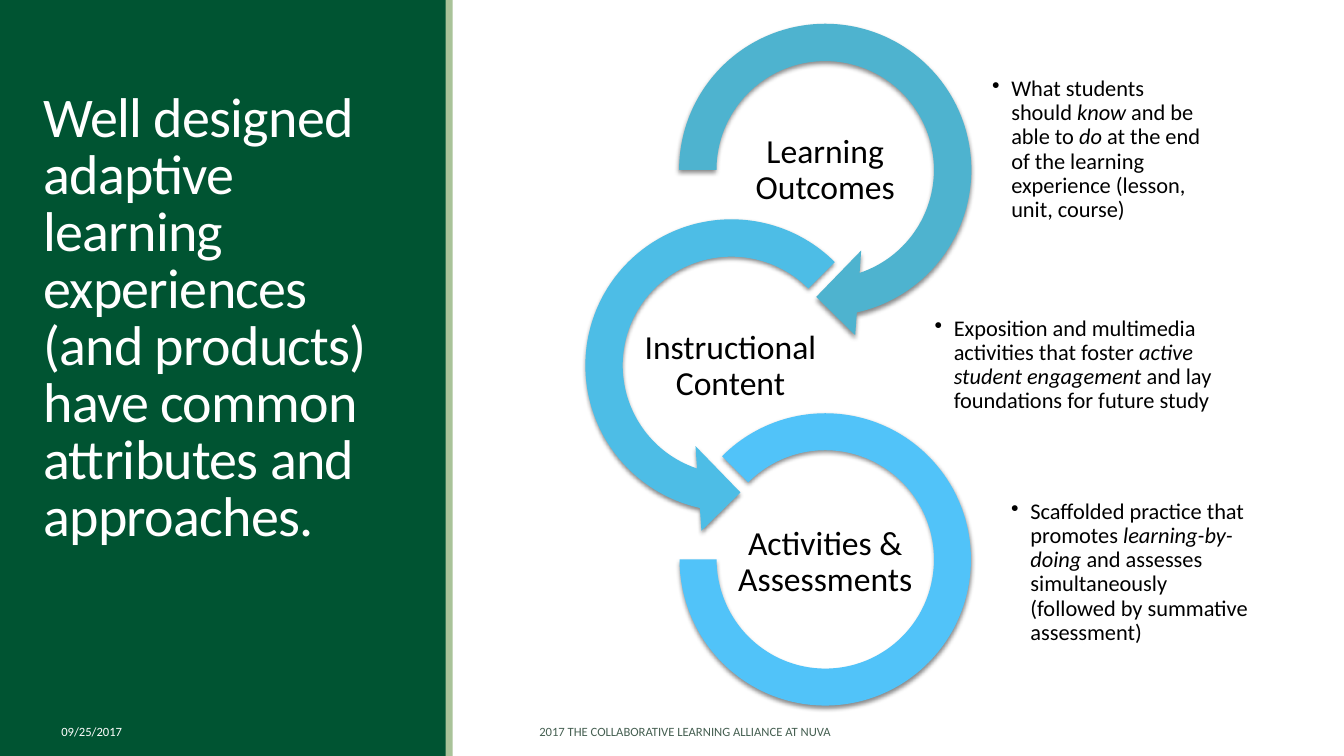
from dataclasses import dataclass

import pptx
import pptx.dml.color
import pptx.enum.shapes
import pptx.enum.text
import pptx.oxml
import pptx.oxml.ns
import pptx.util

Inches = pptx.util.Inches
SHAPE = pptx.enum.shapes.MSO_SHAPE
ALIGN = pptx.enum.text.PP_ALIGN
ANCHOR = pptx.enum.text.MSO_ANCHOR


@dataclass(frozen=True)
class Theme:
    font: str = "Calibri"
    panel: str = "005432"
    stripe: str = "A9C399"
    white: str = "FFFFFF"
    black: str = "000000"
    footer: str = "455F51"
    title_size: int = 40
    label_size: int = 24
    note_size: int = 16
    footer_size: int = 9


THEME = Theme()
STEP_PITCH = 1.945

# Label, label left, arc kind, arc box, arc adjustments, colour, note, note box
STEPS = [
    ("Learning Outcomes", 7.25,
     SHAPE.CIRCULAR_ARROW, (6.5, 0, 3.37, 3.37),
     (0.11, 11.423, 45, 108, 0.125), "4EB3CF",
     "What students should *know* and be able to *do* at the end of the "
     "learning experience (lesson, unit, course)",
     (9.83, 0.66, 2.18, 1.65)),
    ("Instructional Content", 6.31,
     SHAPE.LEFT_CIRCULAR_ARROW, (5.57, 1.94, 3.37, 3.37),
     (0.11, 11.423, 63, 189, 0.125), "4DBDE6",
     "Exposition and multimedia activities that foster *active student "
     "engagement *and lay foundations for future study",
     (9.26, 2.95, 3.05, 1.35)),
    ("Activities & Assessments", 7.25,
     SHAPE.BLOCK_ARC, (6.74, 4.1, 2.89, 2.9),
     (135, 108, 0.127), "51C3F9",
     "Scaffolded practice that promotes *learning-by-doing* and assesses "
     "simultaneously (followed by summative assessment)",
     (10.02, 4.89, 2.44, 1.58)),
]


def rgb(value):
    return pptx.dml.color.RGBColor.from_string(value)


def place(sp, box):
    sp.left, sp.top, sp.width, sp.height = map(Inches, box)


def add_filled(s, kind, box, color, adjustments=()):
    sp = s.shapes.add_shape(kind, *map(Inches, box))
    sp.fill.solid()
    sp.fill.fore_color.rgb = rgb(color)
    sp.line.fill.background()
    sp.shadow.inherit = False
    for i, value in enumerate(adjustments):
        sp.adjustments[i] = value
    return sp


def add_drop_shadow(sp):
    effects = sp.element.spPr.find(pptx.oxml.ns.qn("a:effectLst"))
    effects.append(pptx.oxml.parse_xml(
        f'<a:outerShdw {pptx.oxml.ns.nsdecls("a")} blurRad="38100" '
        'dist="25400" dir="5400000" rotWithShape="0">'
        f'<a:srgbClr val="{THEME.black}"><a:alpha val="45000"/></a:srgbClr>'
        '</a:outerShdw>'))


def set_text(sp, text, *, size, color=THEME.black, align=ALIGN.LEFT,
             anchor=ANCHOR.MIDDLE, line_spacing=None, margin=None,
             bullet=False, tracking=None):
    """Fill a shape with one paragraph; words between asterisks are italic."""
    tf = sp.text_frame
    tf.word_wrap = True
    tf.auto_size = pptx.enum.text.MSO_AUTO_SIZE.NONE
    tf.vertical_anchor = anchor
    if margin is not None:
        tf.margin_left = tf.margin_right = Inches(margin)
        tf.margin_top = tf.margin_bottom = Inches(margin)
    p = tf.paragraphs[0]
    p.alignment = align
    if line_spacing:
        p.line_spacing = line_spacing
    if bullet:
        pPr = p._p.get_or_add_pPr()
        pPr.set("marL", str(Inches(0.19)))
        pPr.set("indent", str(Inches(-0.19)))
        pPr.append(pptx.oxml.parse_xml(
            f'<a:buChar {pptx.oxml.ns.nsdecls("a")} char="•"/>'))
    for i, part in enumerate(text.split("*")):
        r = p.add_run()
        r.text = part
        r.font.name = THEME.font
        r.font.size = pptx.util.Pt(size)
        r.font.color.rgb = rgb(color)
        r.font.italic = i % 2 == 1
        if tracking is not None:
            r._r.get_or_add_rPr().set("spc", str(round(tracking * 100)))


def add_text(s, box, text, **text_format):
    set_text(s.shapes.add_textbox(*map(Inches, box)), text, **text_format)


def add_title(s, text):
    title = s.shapes.title
    place(title, (0.33, 2.06, 3.87, 3.43))
    set_text(title, text, size=THEME.title_size, color=THEME.white,
             anchor=ANCHOR.BOTTOM, line_spacing=0.85, tracking=-0.5)
    # The title must stand in front of the side panel.
    title.element.getparent().append(title.element)


def add_step(s, index, step):
    label, label_left, kind, arc_box, adjustments, color, note, note_box = step
    add_drop_shadow(add_filled(s, kind, arc_box, color, adjustments))
    add_text(s, note_box, note, size=THEME.note_size, line_spacing=0.9,
             margin=0.01, bullet=True)
    add_text(s, (label_left, 1.22 + index * STEP_PITCH, 1.87, 0.94), label,
             size=THEME.label_size, align=ALIGN.CENTER, line_spacing=0.9,
             margin=0.02)


def main():
    prs = pptx.Presentation()
    prs.slide_width, prs.slide_height = Inches(13.33), Inches(7.5)
    s = prs.slides.add_slide(prs.slide_layouts.get_by_name("Title Only"))

    add_filled(s, SHAPE.RECTANGLE, (0, 0, 4.43, 7.5), THEME.panel)
    add_filled(s, SHAPE.RECTANGLE, (4.42, 0, 0.07, 7.5), THEME.stripe)
    add_title(s, "Well designed adaptive learning experiences (and products) "
                 "have common attributes and approaches.")
    for index, step in enumerate(STEPS):
        add_step(s, index, step)
    add_text(s, (0.51, 7.06, 2.86, 0.4), "09/25/2017",
             size=THEME.footer_size, color=THEME.white)
    add_text(s, (5.25, 7.06, 5.08, 0.4),
             "2017 THE COLLABORATIVE LEARNING ALLIANCE AT NUVA",
             size=THEME.footer_size, color=THEME.footer)
    prs.save("out.pptx")


if __name__ == "__main__":
    main()
